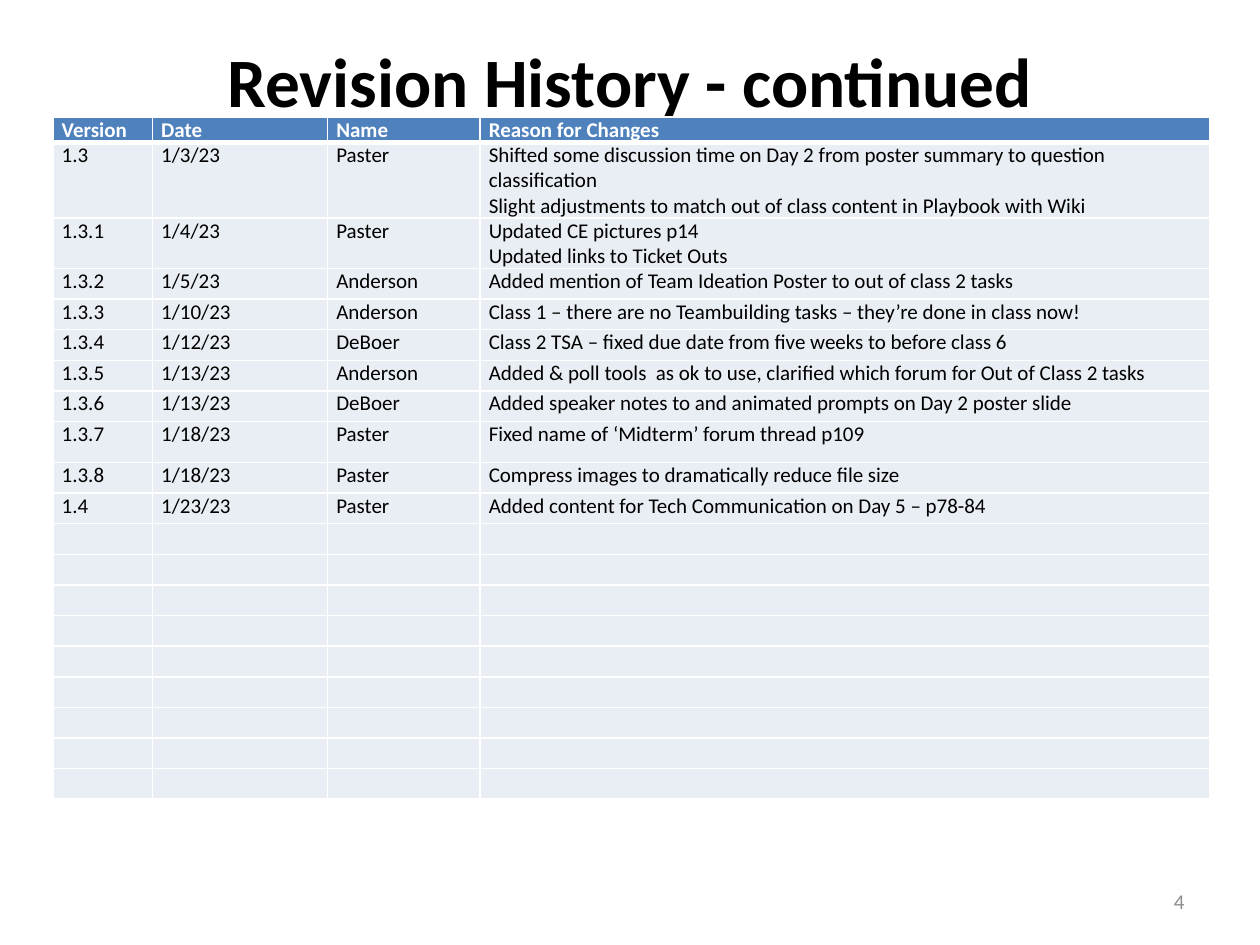
import pptx
import pptx.util
import pptx.dml.color
import pptx.enum.text
import pptx.oxml.ns
from lxml import etree

deck = pptx.Presentation()
deck.slide_width = pptx.util.Inches(10)
deck.slide_height = pptx.util.Inches(7.5)
slide = deck.slides.add_slide(deck.slide_layouts[6])

# One unit is one percent of the slide's width or height
wide = deck.slide_width / 100
high = deck.slide_height / 100
align = pptx.enum.text.PP_ALIGN
anchor = pptx.enum.text.MSO_ANCHOR
qn = pptx.oxml.ns.qn


def color(code):
    return pptx.dml.color.RGBColor.from_string(code)


def style(run, size, code, bold=False):
    looks = {"name": "Calibri", "size": pptx.util.Pt(size), "bold": bold}
    for key, value in looks.items():
        setattr(run.font, key, value)
    run.font.color.rgb = color(code)


# Title and page number
labels = [
    ("Revision History - continued", (5, 4, 90, 16.67), 39.6, "000000", True,
     {"vertical_anchor": anchor.TOP, "margin_top": 0}, align.CENTER),
    ("4", (71.7, 92.67, 23.3, 5.33), 12, "8C8C8C", False,
     {"vertical_anchor": anchor.MIDDLE}, align.RIGHT),
]
for text, (x, y, w, h), size, code, bold, look, side in labels:
    box = slide.shapes.add_textbox(
        int(x * wide), int(y * high), int(w * wide), int(h * high))
    frame = box.text_frame
    frame.word_wrap = True
    for key, value in look.items():
        setattr(frame, key, value)
    para = frame.paragraphs[0]
    para.alignment = side
    run = para.add_run()
    run.text = text
    style(run, size, code, bold)

# Revision entries; a line feed starts a new paragraph
rows = [
    ("Version", "Date", "Name", "Reason for Changes"),
    ("1.3", "1/3/23", "Paster",
     "Shifted some discussion time on Day 2 from poster summary to question classification\n"
     "Slight adjustments to match out of class content in Playbook with Wiki"),
    ("1.3.1", "1/4/23", "Paster",
     "Updated CE pictures p14\nUpdated links to Ticket Outs"),
    ("1.3.2", "1/5/23", "Anderson",
     "Added mention of Team Ideation Poster to out of class 2 tasks"),
    ("1.3.3", "1/10/23", "Anderson",
     "Class 1 – there are no Teambuilding tasks – they’re done in class now!"),
    ("1.3.4", "1/12/23", "DeBoer",
     "Class 2 TSA – fixed due date from five weeks to before class 6"),
    ("1.3.5", "1/13/23", "Anderson",
     "Added & poll tools  as ok to use, clarified which forum for Out of Class 2 tasks"),
    ("1.3.6", "1/13/23", "DeBoer",
     "Added speaker notes to and animated prompts on Day 2 poster slide"),
    ("1.3.7", "1/18/23", "Paster", "Fixed name of ‘Midterm’ forum thread p109"),
    ("1.3.8", "1/18/23", "Paster",
     "Compress images to dramatically reduce file size"),
    ("1.4", "1/23/23", "Paster",
     "Added content for Tech Communication on Day 5 – p78-84"),
]
rows += [("",) * 4] * 9

# Table grid
cols = [7.9, 13.9, 12.1, 57.9]
tall = {0: 1, 1: 4, 8: 4.34}
sizes = [tall.get(i, 3.24) for i in range(len(rows))]
table = slide.shapes.add_table(
    len(rows), len(cols), int(4.2 * wide), int(12.4 * high),
    int(sum(cols) * wide), int(sum(sizes) * high)).table
table.first_row = table.horz_banding = False
for col, w in zip(table.columns, cols):
    col.width = int(w * wide)
for row, h in zip(table.rows, sizes):
    row.height = int(h * high)

# Cells
inset = {"margin_left": 0.7 * wide, "margin_right": 0.7 * wide,
         "margin_top": 0, "margin_bottom": 0}
for i, row in enumerate(rows):
    head = i == 0
    for j, text in enumerate(row):
        cell = table.cell(i, j)
        for key, value in inset.items():
            setattr(cell, key, int(value))
        cell.fill.solid()
        cell.fill.fore_color.rgb = color("4F81BD" if head else "E9EDF4")

        # Text; an empty cell needs its size on the paragraph end
        cell.text = text
        for para in cell.text_frame.paragraphs:
            for run in para.runs:
                style(run, 12, "FFFFFF" if head else "000000", head)
            if not text:
                etree.SubElement(para._p, qn("a:endParaRPr"), sz="1200")

        # White rules, thicker under the header
        props = cell._tc.get_or_add_tcPr()
        for spot, side in enumerate("LRTB"):
            thick = (i, side) in [(0, "B"), (1, "T")]
            line = etree.Element(qn("a:ln" + side),
                                 w=str(pptx.util.Pt(3 if thick else 1)))
            fill = etree.SubElement(line, qn("a:solidFill"))
            etree.SubElement(fill, qn("a:srgbClr"), val="FFFFFF")
            props.insert(spot, line)

deck.save("out.pptx")
